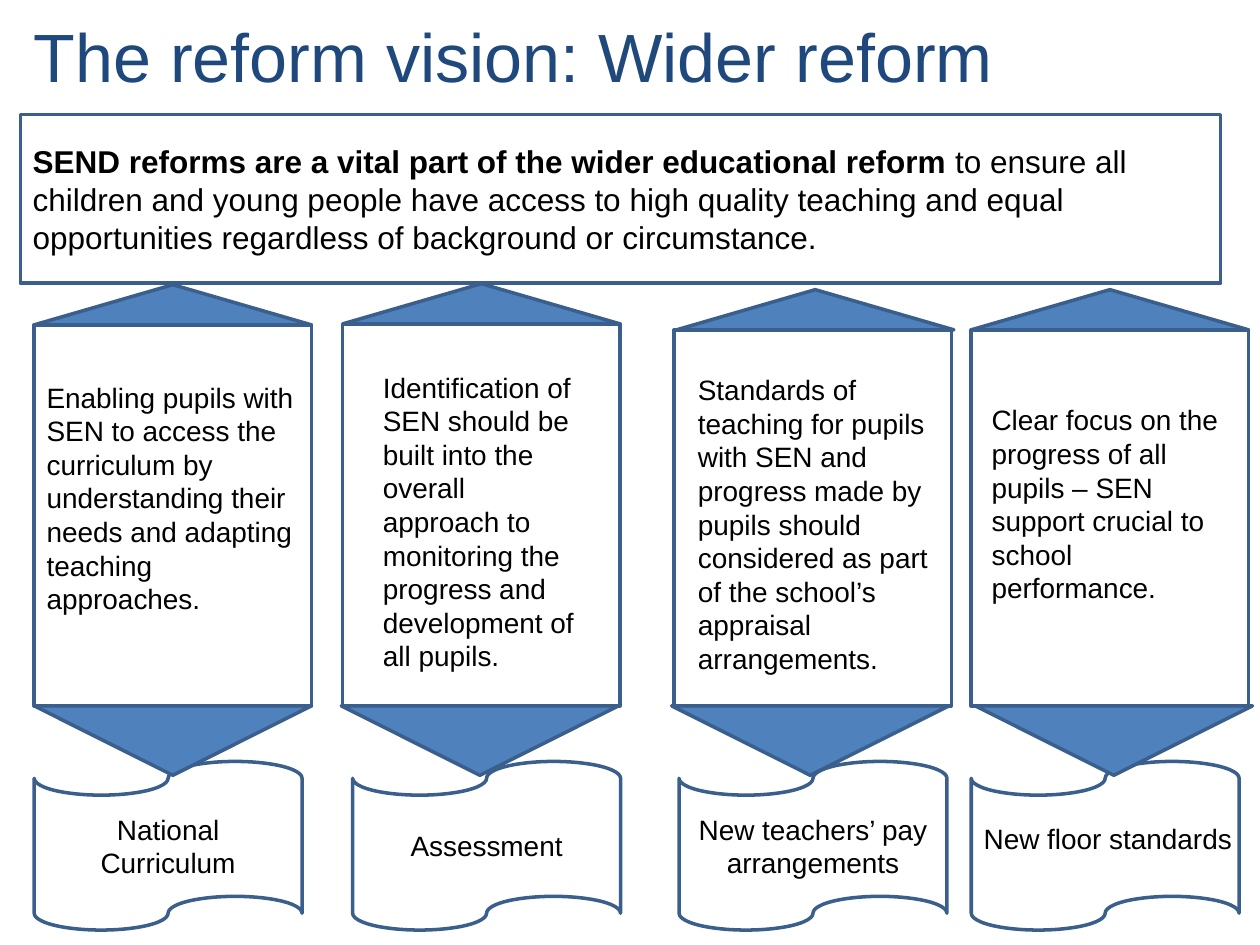
from dataclasses import dataclass

from pptx import Presentation
from pptx import util as u
from pptx.dml.color import RGBColor
from pptx.enum import shapes, text


@dataclass(frozen=True)
class Theme:
    title: RGBColor = RGBColor(0x1F, 0x49, 0x7D)
    body: RGBColor = RGBColor(0, 0, 0)
    accent: RGBColor = RGBColor(0x4F, 0x81, 0xBD)
    outline: RGBColor = RGBColor(0x3A, 0x5F, 0x8C)
    font: str = "Arial"
    title_size: int = 39
    intro_size: int = 18
    body_size: int = 16


@dataclass(frozen=True)
class Box:
    """A region of the slide, in centimetres."""
    left: float
    top: float
    width: float
    height: float

    def inner(self, dx, dy, width, height):
        return Box(self.left + dx, self.top + dy, width, height)

    def lengths(self):
        return [u.Cm(v) for v in (self.left, self.top, self.width, self.height)]


@dataclass(frozen=True)
class Pillar:
    """One reform strand; the shifts are measured from the pillar's left edge."""
    left: float
    top: float
    message: str
    message_box: tuple  # shift right, shift down, width
    label: str
    roof_shift: float = 0
    point_shift: float = 0
    scroll_shift: float = 0
    label_fits: bool = True


THEME = Theme()
KIND = shapes.MSO_SHAPE
ALIGN = text.PP_ALIGN
ANCHOR = text.MSO_ANCHOR

PILLAR_WIDTH, ROOF_HEIGHT, POINT_HEIGHT = 5.59, 0.81, 1.4
SCROLL_WIDTH, SCROLL_HEIGHT = 5.4, 3.4
PANEL_BOTTOM, SCROLL_TOP = 14.23, 15.35

PILLARS = [
    Pillar(0.69, 5.74,
           "Enabling pupils with SEN to access the curriculum by understanding "
           "their needs and adapting teaching approaches.",
           (0, 1.8, 5.59), "National Curriculum"),
    Pillar(6.91, 5.72,
           "Identification of SEN should be built into the overall approach to "
           "monitoring the progress and development of all pupils.",
           (0.56, 1.62, 4.45), "Assessment",
           point_shift=-0.03, scroll_shift=0.2),
    Pillar(13.59, 5.84,
           "Standards of teaching for pupils with SEN and progress made by pupils "
           "should considered as part of the school’s appraisal arrangements.",
           (0.23, 1.55, 5.41), "New teachers’ pay arrangements",
           roof_shift=0.05, point_shift=-0.05, scroll_shift=0.1),
    Pillar(19.58, 5.84,
           "Clear focus on the progress of all pupils – SEN support crucial to "
           "school performance.",
           (0.16, 2.16, 5.26), "New floor standards",
           point_shift=0.08, label_fits=False),
]


def write(shape, runs, size, color=THEME.body, align=ALIGN.LEFT,
          anchor=ANCHOR.MIDDLE, wrap=True):
    """Fill a shape with one paragraph of (wording, bold) runs."""
    frame = shape.text_frame
    frame.word_wrap = wrap
    frame.vertical_anchor = anchor
    paragraph = frame.paragraphs[0]
    paragraph.alignment = align
    for wording, bold in runs:
        run = paragraph.add_run()
        run.text = wording
        style = {"name": THEME.font, "size": u.Pt(size), "bold": bold}
        for attribute, value in style.items():
            setattr(run.font, attribute, value)
        run.font.color.rgb = color


def add_outline(slide, kind, box, fill=None):
    shape = slide.shapes.add_shape(kind, *box.lengths())
    shape.shadow.inherit = False
    if fill is None:
        shape.fill.background()
    else:
        shape.fill.solid()
        shape.fill.fore_color.rgb = fill
    shape.line.color.rgb = THEME.outline
    shape.line.width = u.Pt(2)
    return shape


def add_title(slide, box):
    heading = slide.shapes.add_textbox(*box.lengths())
    write(heading, [("The reform vision: Wider reform", False)],
          THEME.title_size, THEME.title)


def add_intro(slide, box):
    intro = add_outline(slide, KIND.RECTANGLE, box)
    write(intro, [
        ("SEND reforms are a vital part of the wider educational reform ", True),
        ("to ensure all children and young people have access to high quality "
         "teaching and equal opportunities regardless of background or "
         "circumstance.", False),
    ], THEME.intro_size)


def add_pillar(slide, box, pillar):
    # Scroll with the name of the reform
    scroll_box = box.inner(pillar.scroll_shift, SCROLL_TOP - box.top,
                           SCROLL_WIDTH, SCROLL_HEIGHT)
    scroll = add_outline(slide, KIND.FLOWCHART_PUNCHED_TAPE, scroll_box)
    label = [(pillar.label, False)]
    if pillar.label_fits:
        write(scroll, label, THEME.body_size, align=ALIGN.CENTER)
    else:
        caption = slide.shapes.add_textbox(*scroll_box.inner(0, 1.08, 5.7, 0.94).lengths())
        write(caption, label, THEME.body_size, anchor=ANCHOR.TOP, wrap=False)

    # Panel between the roof and the downward point
    panel_height = box.height - ROOF_HEIGHT
    add_outline(slide, KIND.RECTANGLE,
                box.inner(0, ROOF_HEIGHT, box.width, panel_height))
    add_outline(slide, KIND.ISOSCELES_TRIANGLE,
                box.inner(pillar.roof_shift, 0, box.width, ROOF_HEIGHT), THEME.accent)
    add_outline(slide, KIND.FLOWCHART_MERGE,
                box.inner(pillar.point_shift, box.height, box.width, POINT_HEIGHT),
                THEME.accent)

    # Message on the panel
    dx, dy, width = pillar.message_box
    message = slide.shapes.add_textbox(
        *box.inner(dx, dy, width, box.height - dy).lengths())
    write(message, [(pillar.message, False)], THEME.body_size, anchor=ANCHOR.TOP)


def main():
    deck = Presentation()
    deck.slide_width, deck.slide_height = u.Cm(25.4), u.Cm(19.05)
    slide = deck.slides.add_slide(deck.slide_layouts[6])

    add_title(slide, Box(0.43, -0.48, 22.86, 3.18))
    add_intro(slide, Box(0.41, 2.31, 24.2, 3.4))
    for pillar in PILLARS:
        box = Box(pillar.left, pillar.top, PILLAR_WIDTH, PANEL_BOTTOM - pillar.top)
        add_pillar(slide, box, pillar)

    deck.save("out.pptx")


if __name__ == "__main__":
    main()
